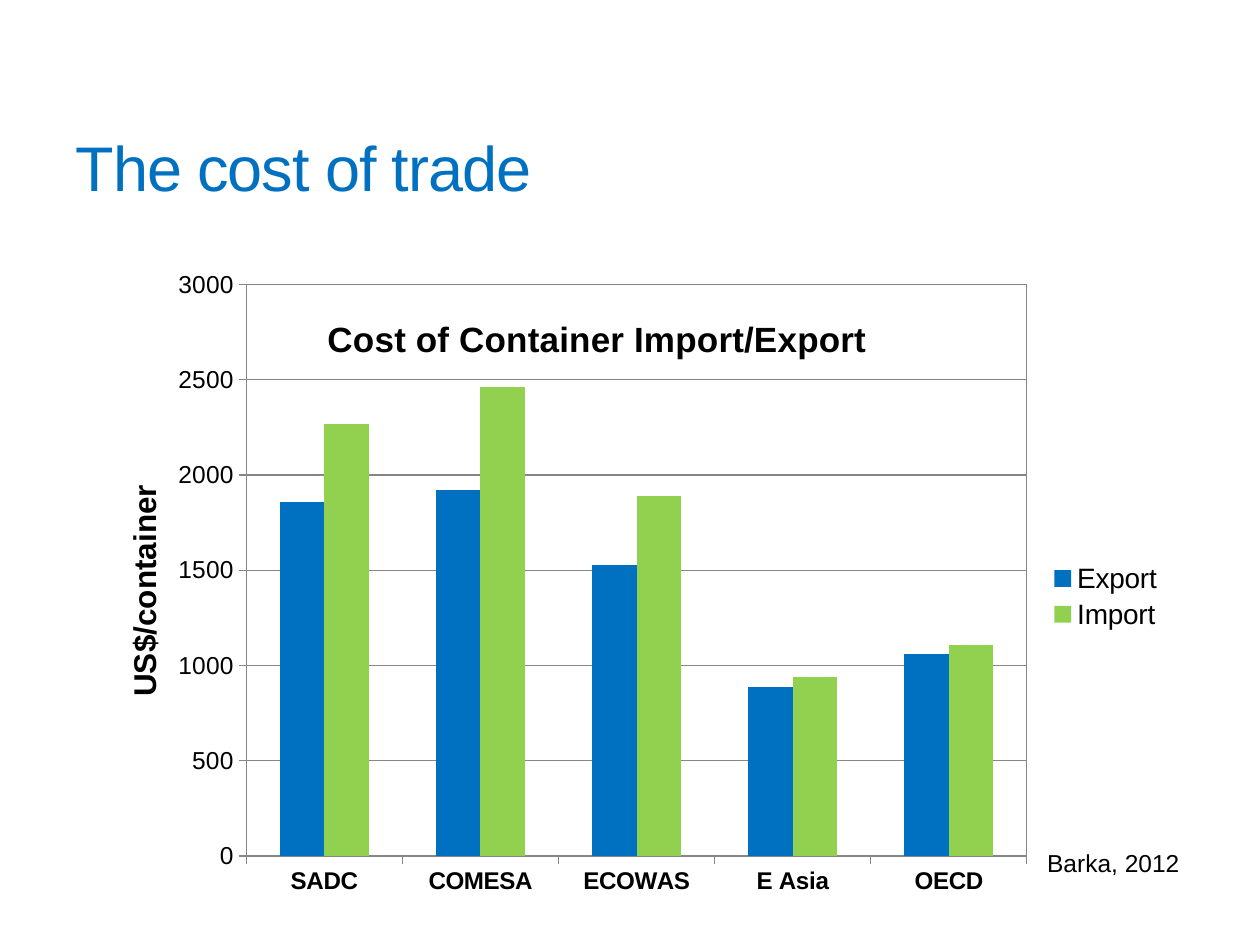
from dataclasses import dataclass

from lxml import etree
from pptx import Presentation
from pptx.chart.data import CategoryChartData
from pptx.dml.color import RGBColor
from pptx.enum.chart import XL_CHART_TYPE, XL_LEGEND_POSITION, XL_TICK_MARK
from pptx.enum.text import MSO_ANCHOR, PP_ALIGN
from pptx.oxml import parse_xml
from pptx.oxml.ns import nsdecls, qn
from pptx.util import Cm, Pt

CLUSTERED = XL_CHART_TYPE.COLUMN_CLUSTERED
LEGEND_RIGHT = XL_LEGEND_POSITION.RIGHT
TICK_OUT = XL_TICK_MARK.OUTSIDE
BOTTOM = MSO_ANCHOR.BOTTOM
LEFT = PP_ALIGN.LEFT
TITLE_ONLY = 5


@dataclass(frozen=True)
class Theme:
    """Colours, font and type sizes of the slide."""
    font: str = "Arial"
    blue: str = "0070C0"
    green: str = "92D050"
    ink: str = "000000"
    rule: str = "868686"
    heading: float = 36
    chart_title: float = 20
    axis_title: float = 18
    legend: float = 16
    label: float = 14
    category: float = 13.8


THEME = Theme()
REGIONS = ["SADC", "COMESA", "ECOWAS", "E Asia", "OECD"]
COSTS = {
    "Export": (THEME.blue, [1860, 1920, 1530, 890, 1060]),
    "Import": (THEME.green, [2270, 2460, 1890, 940, 1110]),
}


def style_font(font, size, color=THEME.ink, bold=False):
    """Apply the theme font with a size, colour and weight."""
    font.name = THEME.font
    font.size = Pt(size)
    font.bold = bold
    font.color.rgb = RGBColor.from_string(color)


def style_line(line):
    """Draw a thin grey rule."""
    line.color.rgb = RGBColor.from_string(THEME.rule)
    line.width = Pt(0.75)


def place(element, **fractions):
    """Set the manual layout of a chart part as fractions of the chart."""
    layout = element.find(qn("c:layout"))
    if layout is None:
        layout = etree.Element(qn("c:layout"))
        element.insert(0, layout)
    manual = etree.SubElement(layout, qn("c:manualLayout"))
    if "w" in fractions:
        etree.SubElement(manual, qn("c:layoutTarget"), val="inner")
    for side in ("x", "y"):
        etree.SubElement(manual, qn(f"c:{side}Mode"), val="edge")
    for side, fraction in fractions.items():
        etree.SubElement(manual, qn(f"c:{side}"), val=str(fraction))


def write_chart_text(title, text, size, x, y):
    """Write a bold chart or axis title and place it over the chart."""
    title.text_frame.text = text
    style_font(title.text_frame.paragraphs[0].runs[0].font, size, bold=True)
    place(title.element, x=x, y=y)
    title.element.find(qn("c:overlay")).set("val", "1")


def frame_plot(plot_area):
    """Outline the plot area in grey."""
    plot_area.append(parse_xml(
        f'<c:spPr {nsdecls("c", "a")}><a:noFill/><a:ln w="9525"><a:solidFill>'
        f'<a:srgbClr val="{THEME.rule}"/></a:solidFill></a:ln></c:spPr>'))


def style_axis(axis, size, bold=False):
    """Set the labels, line and ticks of an axis."""
    style_font(axis.tick_labels.font, size, bold=bold)
    style_line(axis.format.line)
    axis.major_tick_mark = TICK_OUT


def write_heading(slide, text):
    """Place and format the slide title."""
    heading = slide.shapes.title
    heading.left, heading.top = Cm(1.27), Cm(0.43)
    heading.width, heading.height = Cm(22.63), Cm(3.81)
    frame = heading.text_frame
    frame.text = text
    frame.vertical_anchor = BOTTOM
    paragraph = frame.paragraphs[0]
    paragraph.alignment = LEFT
    run = paragraph.runs[0]
    style_font(run.font, THEME.heading, THEME.blue)
    run.font._element.set("spc", "-60")


def add_cost_chart(slide):
    """Add the column chart of container costs."""
    data = CategoryChartData()
    data.categories = REGIONS
    for flow, (_, costs) in COSTS.items():
        data.add_series(flow, costs)
    chart = slide.shapes.add_chart(
        CLUSTERED, Cm(2.16), Cm(5.46), Cm(21.56), Cm(13.11), data).chart
    style_font(chart.font, 10)

    columns = chart.plots[0]
    columns.gap_width = 150
    columns.overlap = 0
    columns.vary_by_categories = False
    for series, (color, _) in zip(columns.series, COSTS.values()):
        series.format.fill.solid()
        series.format.fill.fore_color.rgb = RGBColor.from_string(color)

    style_axis(chart.category_axis, THEME.category, bold=True)
    cost_axis = chart.value_axis
    style_axis(cost_axis, THEME.label)
    cost_axis.minimum_scale, cost_axis.maximum_scale = 0, 3000
    cost_axis.major_unit = 500
    style_line(cost_axis.major_gridlines.format.line)
    write_chart_text(cost_axis.axis_title, "US$/container",
                     THEME.axis_title, 0.01, 0.32)
    write_chart_text(chart.chart_title, "Cost of Container Import/Export",
                     THEME.chart_title, 0.2, 0.06)

    chart.has_legend = True
    chart.legend.position = LEGEND_RIGHT
    chart.legend.include_in_layout = False
    style_font(chart.legend.font, THEME.legend)

    plot_area = chart.element.find(f'{qn("c:chart")}/{qn("c:plotArea")}')
    place(plot_area, x=0.13, y=0.02, w=0.73, h=0.88)
    frame_plot(plot_area)


def add_citation(slide, text):
    """Add the source of the figures beside the chart."""
    frame = slide.shapes.add_textbox(
        Cm(21.11), Cm(16.56), Cm(3.78), Cm(1.17)).text_frame
    frame.word_wrap = True
    frame.margin_left = frame.margin_right = 0
    frame.margin_top = frame.margin_bottom = 0
    frame.text = text
    paragraph = frame.paragraphs[0]
    paragraph.line_spacing = Pt(32)
    style_font(paragraph.runs[0].font, THEME.label)


def main():
    """Build and save the slide."""
    deck = Presentation()
    deck.slide_width, deck.slide_height = Cm(25.4), Cm(19.05)
    slide = deck.slides.add_slide(deck.slide_layouts[TITLE_ONLY])
    write_heading(slide, "The cost of trade")
    add_cost_chart(slide)
    add_citation(slide, "Barka, 2012")
    deck.save("out.pptx")


if __name__ == "__main__":
    main()
